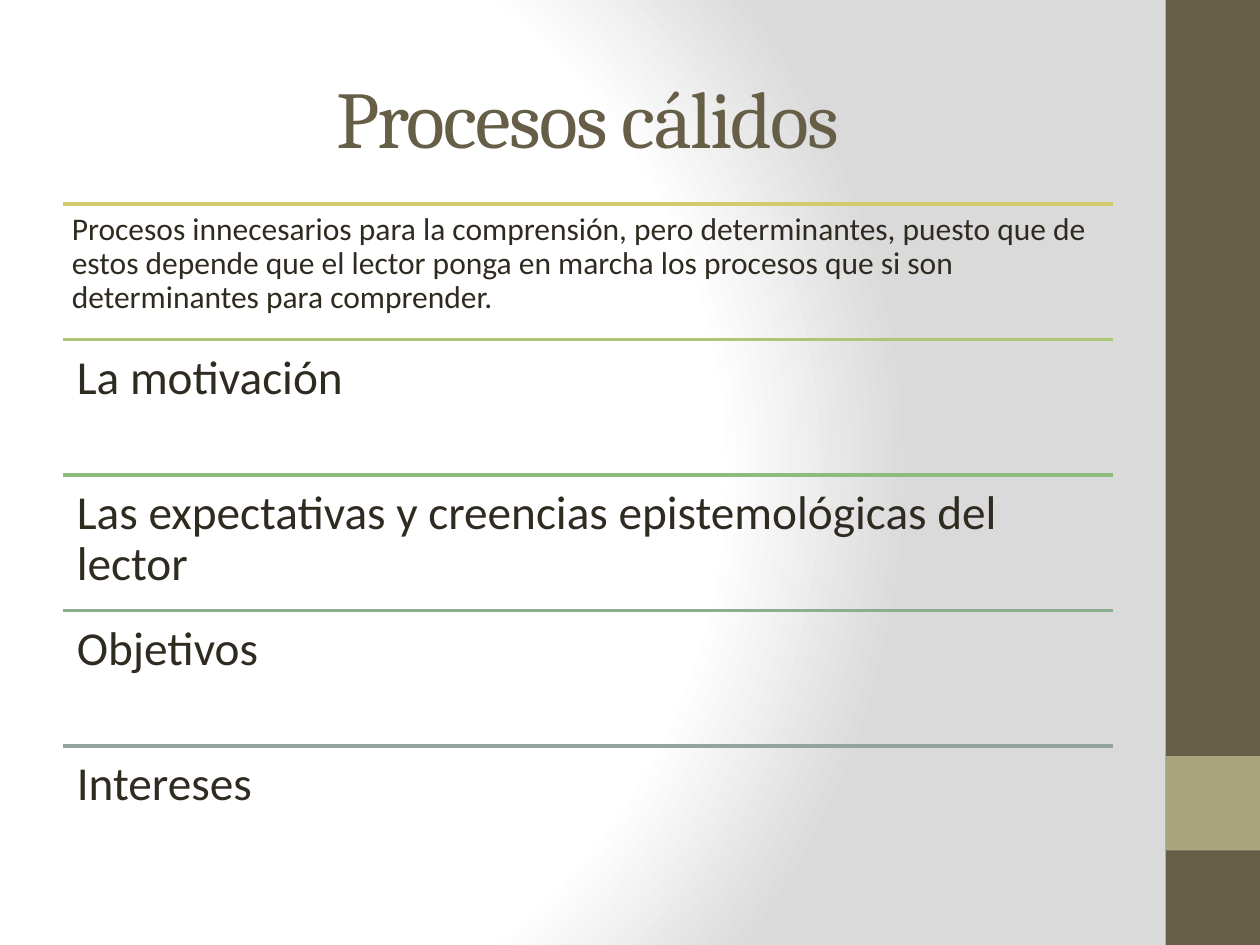
import pptx
import pptx.util
import pptx.oxml
import pptx.oxml.ns
import pptx.dml.color
import pptx.enum.shapes
import pptx.enum.text

HEX = {"brown": "675E47", "sand": "A9A57C", "ink": "2F2B20",
       "white": "FFFFFF", "grey": "DADADA"}
ROWS = [
    ("Procesos innecesarios para la comprensión, pero determinantes, puesto "
     "que de estos depende que el lector ponga en marcha los procesos que si "
     "son determinantes para comprender.", 18, 0.07, "D2CB6C"),
    ("La motivación", 27, 0.11, "ABC776"),
    ("Las expectativas y creencias epistemológicas del lector", 27, 0.11,
     "8FBB80"),
    ("Objetivos", 27, 0.11, "8AAF90"),
    ("Intereses", 27, 0.11, "95A39D"),
]
Inches, Pt = pptx.util.Inches, pptx.util.Pt
RGB = pptx.dml.color.RGBColor.from_string
MSO = pptx.enum.text


def style(frame, text, size, face, color, pad, anchor, align):
    frame.text = text
    form = {"word_wrap": True, "auto_size": MSO.MSO_AUTO_SIZE.NONE,
            "vertical_anchor": anchor}
    for side in ("left", "top", "right", "bottom"):
        form["margin_" + side] = Inches(pad)
    for name, value in form.items():
        setattr(frame, name, value)
    para = frame.paragraphs[0]
    para.alignment = align
    font = para.runs[0].font
    for name, value in {"size": Pt(size), "name": face}.items():
        setattr(font, name, value)
    font.color.rgb = RGB(color)
    return para


deck = pptx.Presentation()
deck.slide_width, deck.slide_height = Inches(10), Inches(7.5)
wide, high = deck.slide_width, deck.slide_height
slide = deck.slides.add_slide(deck.slide_layouts[5])

# Background: round gradient, white at left and grey at right
stops = "".join(
    f'<a:gs pos="{pos * 1000}"><a:srgbClr val="{HEX[name]}"/></a:gs>'
    for pos, name in ((0, "white"), (75, "white"), (100, "grey")))
back = pptx.oxml.parse_xml(
    f'<p:bg {pptx.oxml.ns.nsdecls("p", "a")}><p:bgPr>'
    f'<a:gradFill rotWithShape="1"><a:gsLst>{stops}</a:gsLst>'
    '<a:path path="circle"><a:fillToRect l="20000" t="50000" r="100000" '
    'b="50000"/></a:path></a:gradFill><a:effectLst/></p:bgPr></p:bg>')
slide.element.cSld.insert(0, back)

# Side band
for top, tall, name in ((0, 1, "brown"), (0.8, 0.1, "sand")):
    band = slide.shapes.add_shape(
        pptx.enum.shapes.MSO_SHAPE.RECTANGLE, int(wide * 0.925),
        int(high * top), int(wide * 0.075), int(high * tall))
    band.shadow.inherit = False
    band.fill.solid()
    band.fill.fore_color.rgb = RGB(HEX[name])
    band.line.fill.background()

# Title
left, span = int(wide * 0.05), int(wide * 5 / 6)
title = slide.shapes.title
place = {"left": left, "top": int(high * 0.04), "width": span,
         "height": int(high / 6)}
for name, value in place.items():
    setattr(title, name, value)
para = style(title.text_frame, "Procesos cálidos", 46, "Cambria",
             HEX["brown"], 0.05, MSO.MSO_ANCHOR.MIDDLE, MSO.PP_ALIGN.CENTER)
para.runs[0].font._element.set("spc", "-100")

# Ruled list
first, step = Inches(1.62), Inches(1.075)
group = slide.shapes.add_group_shape()
for row, (text, size, pad, color) in enumerate(ROWS):
    top = first + row * step
    rule = group.shapes.add_connector(
        pptx.enum.shapes.MSO_CONNECTOR.STRAIGHT, left, top, left + span, top)
    rule.line.color.rgb = RGB(color)
    rule.line.width = Pt(2)
    rule._element.spPr.append(pptx.oxml.parse_xml(
        f'<a:effectLst {pptx.oxml.ns.nsdecls("a")}/>'))
    box = group.shapes.add_textbox(left, top, span, step)
    para = style(box.text_frame, text, size, "Calibri", HEX["ink"], pad,
                 MSO.MSO_ANCHOR.TOP, MSO.PP_ALIGN.LEFT)
    para.line_spacing = 0.9
    para.space_after = Pt(round(size * 0.35))

deck.save("out.pptx")
